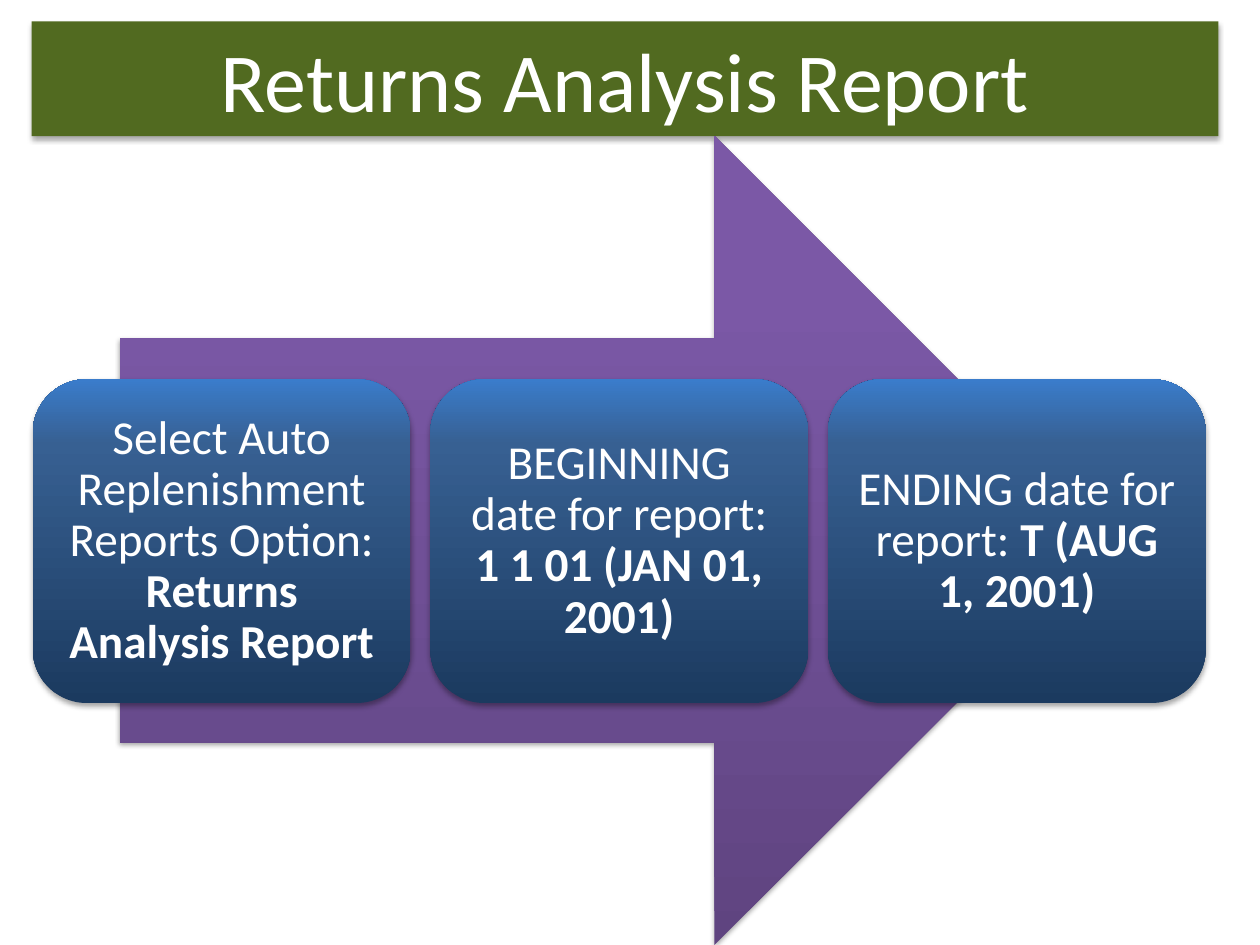
from lxml import etree
from pptx import Presentation
from pptx.dml.color import RGBColor
from pptx.enum.shapes import MSO_SHAPE
from pptx.enum.text import MSO_ANCHOR, PP_ALIGN
from pptx.oxml import parse_xml
from pptx.oxml.ns import qn
from pptx.util import Inches, Pt

RECT, ARROW, ROUNDED = MSO_SHAPE.RECTANGLE, MSO_SHAPE.RIGHT_ARROW, MSO_SHAPE.ROUNDED_RECTANGLE
CENTER, MIDDLE = PP_ALIGN.CENTER, MSO_ANCHOR.MIDDLE
A_NS = "http://schemas.openxmlformats.org/drawingml/2006/main"

TITLE = "Returns Analysis Report"
STEPS = [
    ("Select Auto Replenishment Reports Option: ", "Returns Analysis Report"),
    ("BEGINNING date for report: ", "1 1 01 (JAN 01, 2001)"),
    ("ENDING date for report: ", "T (AUG 1, 2001)"),
]
COLORS = {"title": "516A20", "text": "FFFFFF", "shadow": "000000"}
GRADIENTS = {
    "arrow": [(0, "5F4480"), (80, "7B58A6"), (100, "7C57A8")],
    "step": [(0, "1B3A5F"), (80, "376092"), (100, "3A7CCB")],
}
FONT = "Calibri"
STEP_LEFT, STEP_TOP, STEP_W, STEP_H, STEP_GAP = 0.26, 3.01, 3, 2.57, 0.155
STEP_INSET = 0.11


def add_shadow(s):
    s.shadow.inherit = False
    s._element.spPr.find(qn("a:effectLst")).append(parse_xml(
        f'<a:outerShdw xmlns:a="{A_NS}" blurRad="{Pt(3.1)}" dist="{Pt(1.8)}" '
        f'dir="5400000" rotWithShape="0"><a:srgbClr val="{COLORS["shadow"]}">'
        '<a:alpha val="35000"/></a:srgbClr></a:outerShdw>'))


def set_gradient(s, stops):
    s.fill.gradient()
    s.fill.gradient_angle = 90
    gs_list = s._element.spPr.find(qn("a:gradFill")).find(qn("a:gsLst"))
    for gs in list(gs_list):
        gs_list.remove(gs)
    for position, color in stops:
        gs = etree.SubElement(gs_list, qn("a:gs"), pos=str(position * 1000))
        etree.SubElement(gs, qn("a:srgbClr"), val=color)


def add_block(slide, kind, left, top, width, height):
    s = slide.shapes.add_shape(kind, Inches(left), Inches(top), Inches(width), Inches(height))
    s.line.fill.background()
    add_shadow(s)
    return s


def write_text(s, runs, size):
    tf = s.text_frame
    tf.word_wrap = True
    tf.vertical_anchor = MIDDLE
    p = tf.paragraphs[0]
    p.alignment = CENTER
    p.font.name = FONT
    p.font.size = Pt(size)
    p.font.color.rgb = RGBColor.from_string(COLORS["text"])
    for text, bold in runs:
        r = p.add_run()
        r.text = text
        r.font.bold = bold
    return tf


def main():
    prs = Presentation()
    prs.slide_width, prs.slide_height = Inches(10), Inches(7.5)
    slide = prs.slides.add_slide(prs.slide_layouts[6])

    title = add_block(slide, RECT, 0.25, 0.17, 9.42, 0.91)
    title.fill.solid()
    title.fill.fore_color.rgb = RGBColor.from_string(COLORS["title"])
    write_text(title, [(TITLE, False)], 48)

    arrow = add_block(slide, ARROW, 0.95, 1.08, 7.93, 6.42)
    set_gradient(arrow, GRADIENTS["arrow"])

    for i, (prompt, answer) in enumerate(STEPS):
        left = STEP_LEFT + i * (STEP_W + STEP_GAP)
        step = add_block(slide, ROUNDED, left, STEP_TOP, STEP_W, STEP_H)
        set_gradient(step, GRADIENTS["step"])
        tf = write_text(step, [(prompt, False), (answer, True)], 27)
        tf.paragraphs[0].line_spacing = 0.9
        tf.margin_left = tf.margin_right = Inches(STEP_INSET)
        tf.margin_top = tf.margin_bottom = Inches(STEP_INSET)

    prs.save("out.pptx")


if __name__ == "__main__":
    main()
